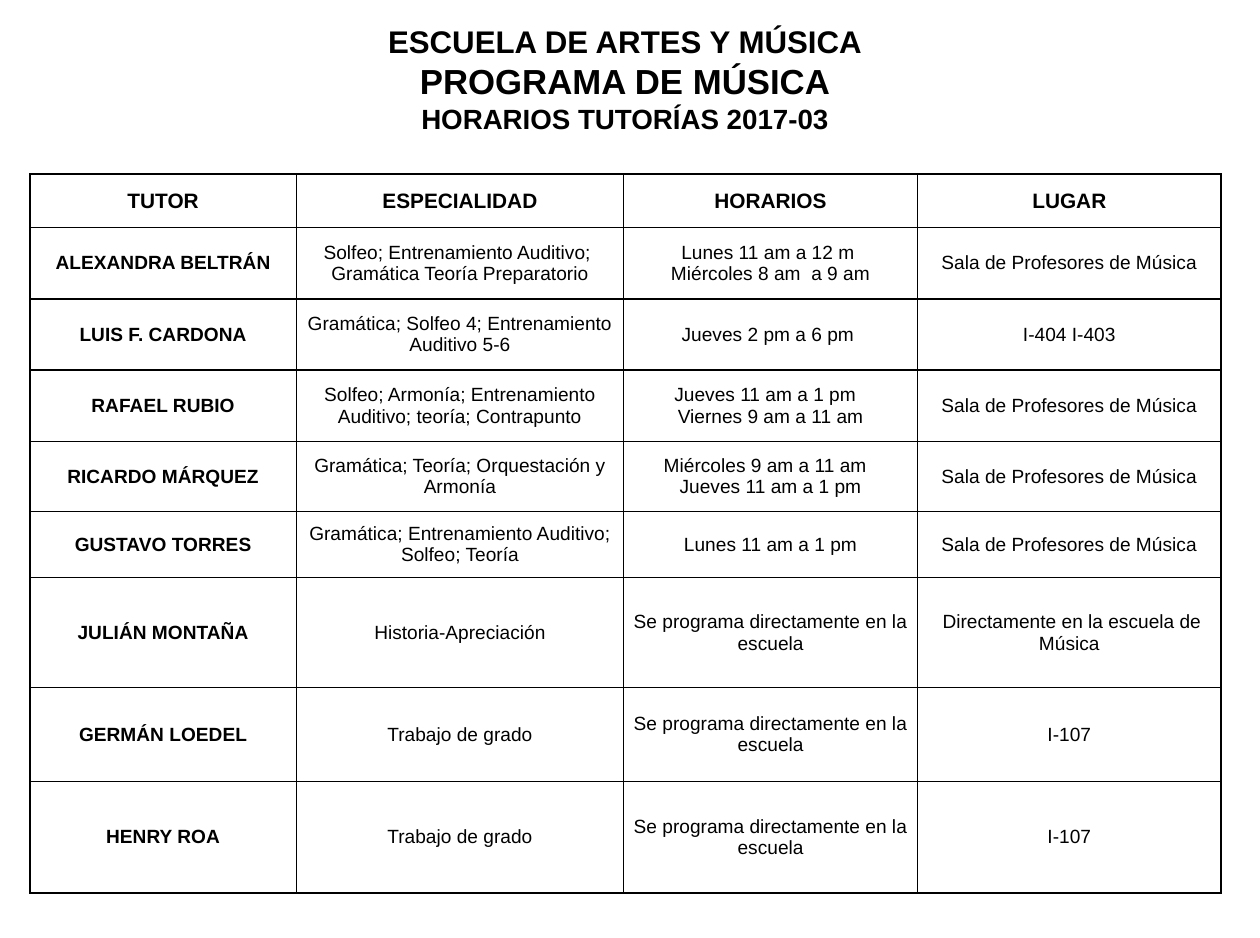
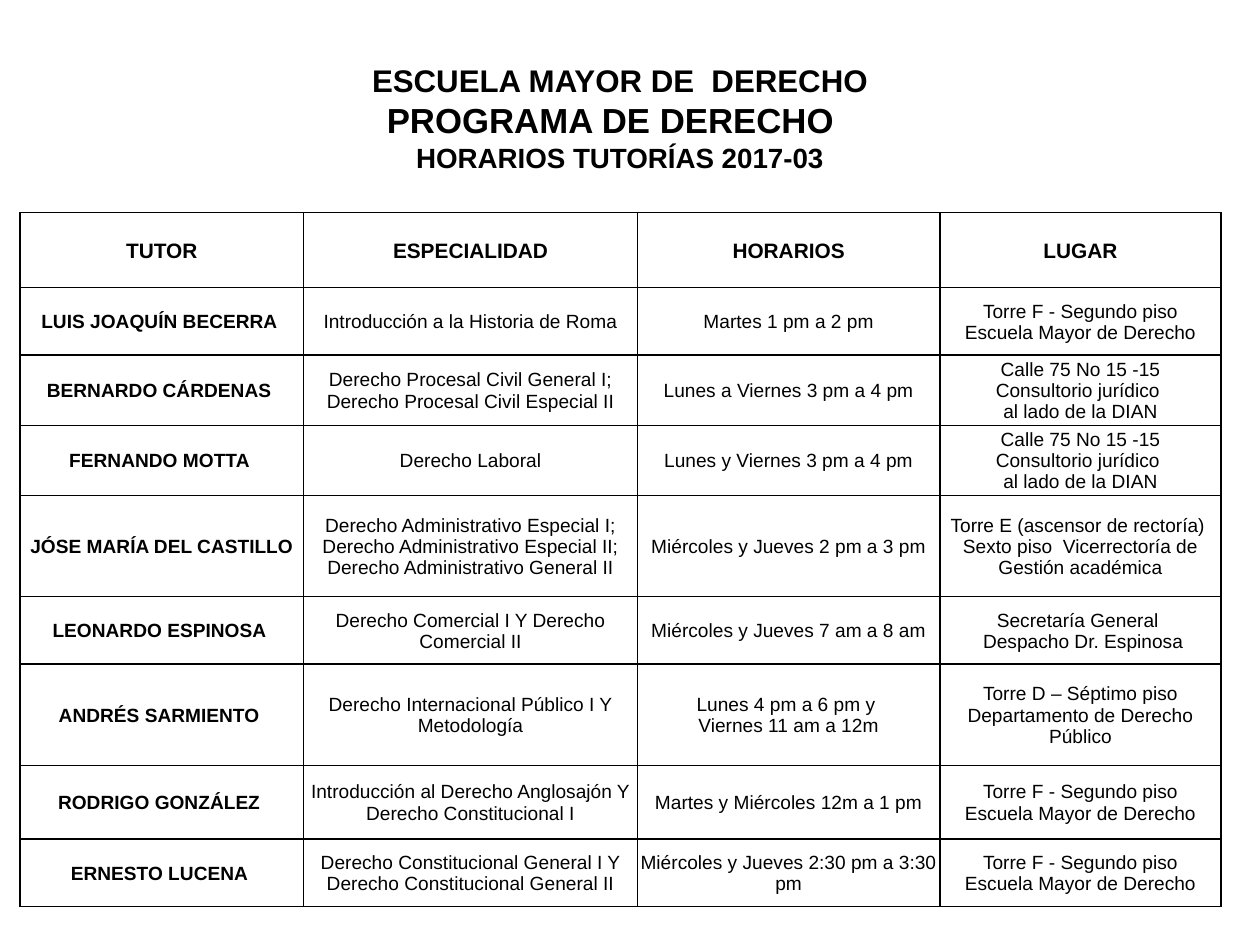
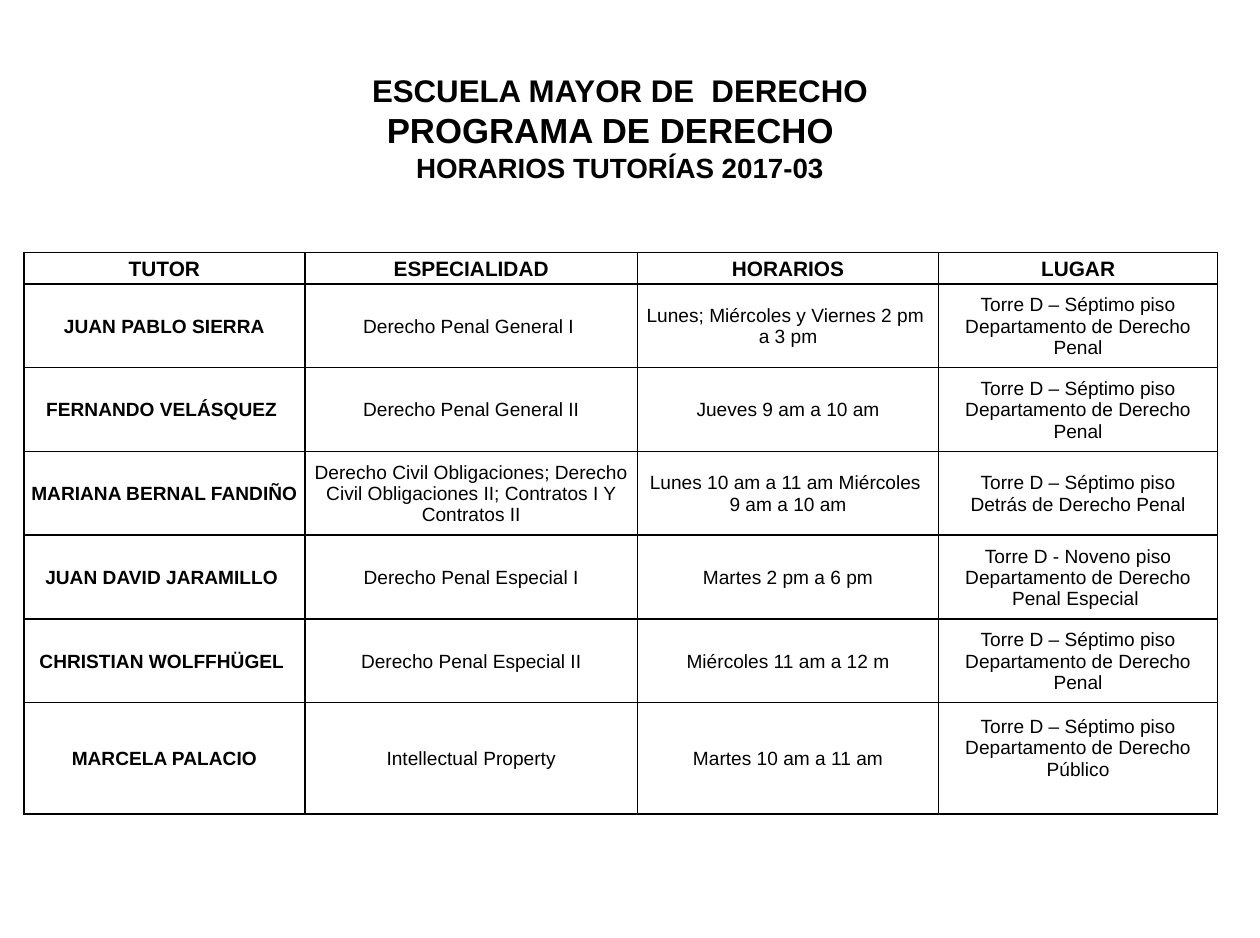
from lxml import etree
from pptx import Presentation, util as u
from pptx.dml.color import RGBColor
from pptx.enum import text
from pptx.oxml import ns

INK = "000000"
HEADS = ("TUTOR", "ESPECIALIDAD", "HORARIOS", "LUGAR")
TERM = "HORARIOS TUTORÍAS 2017-03"
LAW = ("ESCUELA MAYOR DE  DERECHO", "PROGRAMA DE DERECHO  ", TERM)
ROOM = "Sala de Profesores de Música"
ASK = "Se programa directamente en la escuela"
HALL = "Torre F - Segundo piso\nEscuela Mayor de Derecho"
CLINIC = "Calle 75 No 15 -15\nConsultorio jurídico \nal lado de la DIAN"
FLOOR = "Torre D – Séptimo piso\n"
PENAL = FLOOR + "Departamento de Derecho Penal"
PUBLIC = FLOOR + "Departamento de Derecho Público"

MUSIC_ROWS = (
    (0.43, *HEADS),
    (0.57, "ALEXANDRA BELTRÁN", "Solfeo; Entrenamiento Auditivo;  Gramática Teoría Preparatorio",
     "Lunes 11 am a 12 m \n Miércoles 8 am  a 9 am ", ROOM),
    (0.57, "LUIS F. CARDONA", "Gramática; Solfeo 4; Entrenamiento Auditivo 5-6",
     "Jueves 2 pm a 6 pm ", "I-404 I-403"),
    (0.57, "RAFAEL RUBIO", "Solfeo; Armonía; Entrenamiento Auditivo; teoría; Contrapunto",
     "Jueves 11 am a 1 pm  \nViernes 9 am a 11 am", ROOM),
    (0.56, "RICARDO MÁRQUEZ", "Gramática; Teoría; Orquestación y Armonía",
     "Miércoles 9 am a 11 am  \nJueves 11 am a 1 pm", ROOM),
    (0.53, "GUSTAVO TORRES", "Gramática; Entrenamiento Auditivo; Solfeo; Teoría",
     "Lunes 11 am a 1 pm", ROOM),
    (0.88, "JULIÁN MONTAÑA", "Historia-Apreciación", ASK, " Directamente en la escuela de Música"),
    (0.75, "GERMÁN LOEDEL", "Trabajo de grado", ASK, "I-107"),
    (0.89, "HENRY ROA", "Trabajo de grado", ASK, "I-107"),
)

LAW_ROWS = (
    (0.6, *HEADS),
    (0.54, "LUIS JOAQUÍN BECERRA ", "Introducción a la Historia de Roma", "Martes 1 pm a 2 pm", HALL),
    (0.56, "BERNARDO CÁRDENAS ", "Derecho Procesal Civil General I; Derecho Procesal Civil Especial II",
     "Lunes a Viernes 3 pm a 4 pm", CLINIC),
    (0.56, "FERNANDO MOTTA ", "Derecho Laboral", "Lunes y Viernes 3 pm a 4 pm", CLINIC),
    (0.81, "JÓSE MARÍA DEL CASTILLO",
     "Derecho Administrativo Especial I; Derecho Administrativo Especial II; Derecho Administrativo General II",
     "Miércoles y Jueves 2 pm a 3 pm",
     "Torre E (ascensor de rectoría)  Sexto piso  Vicerrectoría de Gestión académica"),
    (0.54, "LEONARDO ESPINOSA ", "Derecho Comercial I Y Derecho Comercial II",
     "Miércoles y Jueves 7 am a 8 am", "Secretaría General \n Despacho Dr. Espinosa"),
    (0.81, "ANDRÉS SARMIENTO ", "Derecho Internacional Público I Y Metodología",
     "Lunes 4 pm a 6 pm y \nViernes 11 am a 12m", PUBLIC),
    (0.59, "RODRIGO GONZÁLEZ ", "Introducción al Derecho Anglosajón Y Derecho Constitucional I",
     "Martes y Miércoles 12m a 1 pm", HALL),
    (0.54, "ERNESTO LUCENA ", "Derecho Constitucional General I Y Derecho Constitucional General II",
     "Miércoles y Jueves 2:30 pm a 3:30 pm", HALL),
)

PENAL_ROWS = (
    (0.25, *HEADS),
    (0.67, "JUAN PABLO SIERRA", "Derecho Penal General I ",
     "Lunes; Miércoles y Viernes 2 pm \na 3 pm", PENAL),
    (0.67, "FERNANDO VELÁSQUEZ ", "Derecho Penal General II", "Jueves 9 am a 10 am", PENAL),
    (0.67, "MARIANA BERNAL FANDIÑO",
     "Derecho Civil Obligaciones; Derecho Civil Obligaciones II; Contratos I Y Contratos II",
     "Lunes 10 am a 11 am Miércoles \n9 am a 10 am", FLOOR + "Detrás de Derecho Penal"),
    (0.67, "JUAN DAVID JARAMILLO ", "Derecho Penal Especial I", "Martes 2 pm a 6 pm",
     "Torre D - Noveno piso Departamento de Derecho Penal Especial "),
    (0.67, "CHRISTIAN WOLFFHÜGEL ", "Derecho Penal Especial II", "Miércoles 11 am a 12 m", PENAL),
    (0.89, "MARCELA PALACIO", "Intellectual Property", "Martes 10 am a 11 am", PUBLIC),
)


def paint(color, tone):
    color.rgb = RGBColor.from_string(tone)


def apply(item, form):
    for name, value in form.items():
        setattr(item, name, value)


class Deck:
    font = "Arial"
    sizes = (18, 20, 16)

    def __init__(self):
        self.file = Presentation()
        apply(self.file, {"slide_width": u.Inches(10.08), "slide_height": u.Inches(7.5)})

    def page(self):
        self.slide = self.file.slides.add_slide(self.file.slide_layouts[6])

    def style(self, para, size, bold):
        para.alignment = text.PP_ALIGN.CENTER
        for run in para.runs:
            apply(run.font, {"name": self.font, "size": u.Pt(size), "bold": bold})
            paint(run.font.color, INK)

    def title(self, left, top, lines):
        box = self.slide.shapes.add_textbox(*map(u.Inches, (left, top, 9.92, 1.01)))
        frame = box.text_frame
        apply(frame, {"word_wrap": True, "text": "\n".join(lines)})
        for para, size in zip(frame.paragraphs, self.sizes):
            self.style(para, size, True)

    def border(self, cell):
        props = cell._tc.get_or_add_tcPr()
        for spot, side in enumerate(("lnL", "lnR", "lnT", "lnB")):
            line = etree.Element(ns.qn("a:" + side), w=str(u.Pt(1)))
            fill = etree.SubElement(line, ns.qn("a:solidFill"))
            etree.SubElement(fill, ns.qn("a:srgbClr"), val=INK)
            props.insert(spot, line)

    def cell(self, cell, words, size, bold, inset):
        edge = u.Inches(inset)
        apply(cell, {"text": words, "vertical_anchor": text.MSO_ANCHOR.MIDDLE,
                     "margin_left": edge, "margin_right": edge,
                     "margin_top": edge, "margin_bottom": 0})
        cell.fill.background()
        self.border(cell)
        for para in cell.text_frame.paragraphs:
            self.style(para, size, bold)

    def table(self, left, top, widths, rows, inset):
        place = map(u.Inches, (left, top, sum(widths), sum(row[0] for row in rows)))
        grid = self.slide.shapes.add_table(len(rows), len(widths), *place).table
        apply(grid, {"first_row": False, "horz_banding": False})
        for col, width in zip(grid.columns, widths):
            col.width = u.Inches(width)
        for r, (height, *words) in enumerate(rows):
            grid.rows[r].height = u.Inches(height)
            for c, word in enumerate(words):
                self.cell(grid.cell(r, c), word, 11 if r else 12, r == 0 or c == 0, inset)
        return grid


def main():
    deck = Deck()
    deck.page()
    deck.table(0.24, 1.39, (2.13, 2.62, 2.35, 2.43), MUSIC_ROWS, 0)
    deck.title(0.04, 0.13, ("ESCUELA DE ARTES Y MÚSICA", "PROGRAMA DE MÚSICA", TERM))

    deck.page()
    deck.table(0.16, 1.7, (2.27, 2.67, 2.42, 2.25), LAW_ROWS, 0.01)
    deck.title(0, 0.44, LAW)

    deck.page()
    grid = deck.table(0.19, 2.02, (2.25, 2.66, 2.41, 2.23), PENAL_ROWS, 0.01)
    grid.cell(6, 3).margin_bottom = u.Inches(0.17)
    deck.title(0, 0.52, LAW)
    deck.file.save("out.pptx")


if __name__ == "__main__":
    main()
